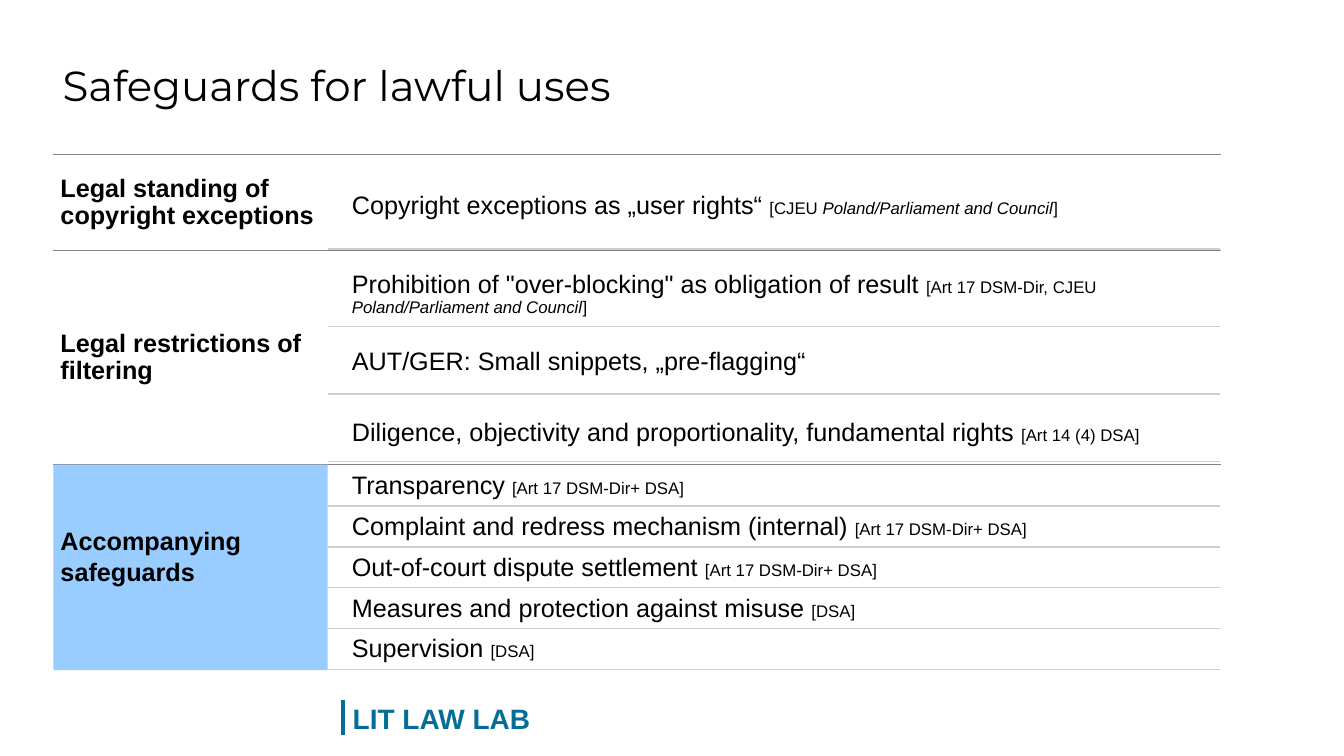
from dataclasses import dataclass

from lxml.etree import SubElement
from pptx import Presentation
from pptx.dml.color import RGBColor
from pptx.enum.shapes import MSO_CONNECTOR as Connector, MSO_SHAPE as Shape
from pptx.enum.text import MSO_ANCHOR as Anchor, MSO_AUTO_SIZE as AutoSize, PP_ALIGN as Align
from pptx.oxml.ns import qn
from pptx.util import Emu, Pt

# Content: each row is a list of (text, style) spans
TITLE = "Safeguards for lawful uses"
FOOTER = "LIT LAW LAB"
CASE = ("Poland/Parliament and Council", "case")
DSM_DSA = ("[Art 17 DSM-Dir+ DSA]", "note")
DSA = ("[DSA]", "note")

SECTIONS = [
    dict(label="Legal standing of copyright exceptions",
         rule=153, label_top=153, label_height=97,
         first_row=163, row_height=84, pitch=84,
         rows=[[("Copyright exceptions as „user rights“ ", "main"),
                ("[CJEU ", "note"), CASE, ("]", "note")]]),
    dict(label="Legal restrictions of filtering",
         rule=248, label_top=253, label_height=204,
         first_row=260, row_height=64, pitch=67, last_drop=4,
         rows=[[('Prohibition of "over-blocking" as obligation of result ', "main"),
                ("[Art 17 DSM-Dir, CJEU ", "note"), CASE, ("]", "note")],
               [("AUT/GER: Small snippets, „pre-flagging“", "main")],
               [("Diligence, objectivity and proportionality, fundamental rights ", "main"),
                ("[Art 14 (4) DSA]", "note")]]),
    dict(label="Accompanying safeguards",
         rule=461, label_top=461, label_height=204,
         first_row=463, row_height=39, pitch=40.5,
         label_format=dict(fill="99CCFF", spacing=1.0, bottom_inset=30),
         rows=[[("Transparency ", "main"), DSM_DSA],
               [("Complaint and redress mechanism (internal) ", "main"), DSM_DSA],
               [("Out-of-court dispute settlement ", "main"), DSM_DSA],
               [("Measures and protection against misuse ", "main"), DSA],
               [("Supervision ", "main"), DSA]]),
]


@dataclass(frozen=True)
class Theme:
    ink: str = "000000"
    accent: str = "046E98"
    section_rule: str = "808288"
    row_rule: str = "CDCDCF"
    heading_font: str = "Montserrat"
    body_font: str = "Arial"
    title_size: int = 30
    footer_size: int = 20
    main_size: int = 18
    note_size: int = 12


THEME = Theme()
STYLES = {
    "title": dict(size=THEME.title_size, font=THEME.heading_font),
    "label": dict(size=THEME.main_size, bold=True),
    "main": dict(size=THEME.main_size),
    "note": dict(size=THEME.note_size),
    "case": dict(size=THEME.note_size, italic=True),
    "footer": dict(size=THEME.footer_size, bold=True, color=THEME.accent),
}

# Layout, 100 px to the inch
PX = 9144
LEFT, RIGHT = 53, 1211
LABEL_WIDTH = 272
ROW_RULE_LEFT, ROW_RULE_RIGHT = LEFT + LABEL_WIDTH, 1210
ROW_LEFT = 342


def px(value):
    return Emu(round(value * PX))


def rgb(code):
    return RGBColor.from_string(code)


def write(box, spans, inset=7, bottom_inset=None, spacing=0.9, fill=None):
    """Fill a text shape with styled spans in one paragraph."""
    frame = box.text_frame
    frame.word_wrap = True
    frame.auto_size = AutoSize.NONE
    frame.vertical_anchor = Anchor.MIDDLE
    frame.margin_left = frame.margin_right = frame.margin_top = px(inset)
    frame.margin_bottom = px(inset if bottom_inset is None else bottom_inset)
    if fill:
        box.fill.solid()
        box.fill.fore_color.rgb = rgb(fill)
    para = frame.paragraphs[0]
    para.alignment = Align.LEFT
    para.line_spacing = spacing
    for text, style in spans:
        look = STYLES[style]
        span = para.add_run()
        span.text = text
        span.font.name = look.get("font", THEME.body_font)
        span.font.size = Pt(look["size"])
        span.font.bold = look.get("bold", False)
        span.font.italic = look.get("italic", False)
        span.font.color.rgb = rgb(look.get("color", THEME.ink))


def add_text(page, left, top, width, height, spans, **format):
    box = page.shapes.add_textbox(px(left), px(top), px(width), px(height))
    write(box, spans, **format)


def add_rule(page, left, right, top, color, weight):
    rule = page.shapes.add_connector(
        Connector.STRAIGHT, px(left), px(top), px(right), px(top))
    rule.line.color.rgb = rgb(color)
    rule.line.width = Pt(weight)
    SubElement(rule._element.spPr, qn("a:effectLst"))


def add_section(page, section):
    add_rule(page, LEFT, RIGHT, section["rule"], THEME.section_rule, 0.5)
    add_text(page, LEFT, section["label_top"], LABEL_WIDTH, section["label_height"],
             [(section["label"], "label")], **section.get("label_format", {}))
    height = section["row_height"]
    last = len(section["rows"]) - 1
    for index, spans in enumerate(section["rows"]):
        top = section["first_row"] + index * section["pitch"]
        drop = section.get("last_drop", 0) if index == last else 0
        add_text(page, ROW_LEFT, top + drop, RIGHT - ROW_LEFT, height, spans)
        add_rule(page, ROW_RULE_LEFT, ROW_RULE_RIGHT, top + height, THEME.row_rule, 1)


def add_footer(page):
    bar = page.shapes.add_shape(Shape.RECTANGLE, px(339), px(695), px(3), px(34))
    bar.shadow.inherit = False
    bar.fill.solid()
    bar.fill.fore_color.rgb = bar.line.color.rgb = rgb(THEME.accent)
    bar.line.width = Pt(1)
    add_text(page, 340, 691, 200, 44, [(FOOTER, "footer")], inset=10, spacing=1.0)


def main():
    deck = Presentation()
    deck.slide_width, deck.slide_height = px(1333), px(750)
    page = deck.slides.add_slide(deck.slide_layouts[5])

    # Title
    title = page.shapes.title
    title.left, title.top, title.width, title.height = px(52), px(44), px(1217), px(89)
    write(title, [(TITLE, "title")], inset=10, spacing=0.83)

    # Sections and footer
    for section in SECTIONS:
        add_section(page, section)
    add_footer(page)
    deck.save("out.pptx")


if __name__ == "__main__":
    main()
